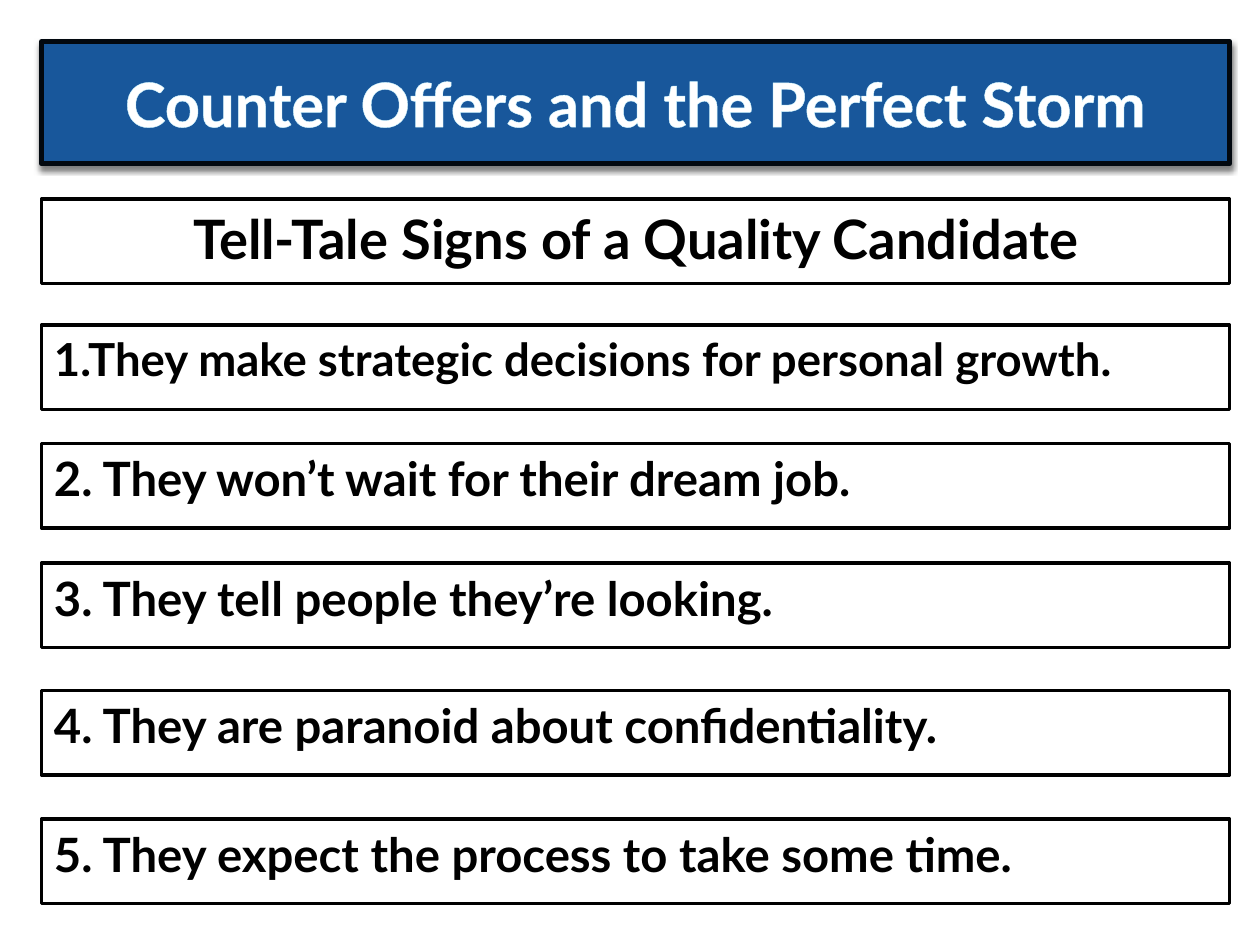
"""Build the slide on counter offers and the signs of a quality candidate."""
from dataclasses import dataclass

from lxml import etree
from pptx import Presentation
from pptx.dml.color import RGBColor
from pptx.enum.shapes import MSO_SHAPE
from pptx.enum.text import MSO_ANCHOR, MSO_AUTO_SIZE, PP_ALIGN
from pptx.oxml import parse_xml
from pptx.shapes.autoshape import Shape
from pptx.slide import Slide
from pptx.util import Inches, Pt

RECTANGLE = MSO_SHAPE.RECTANGLE
TOP, MIDDLE = MSO_ANCHOR.TOP, MSO_ANCHOR.MIDDLE
LEFT, CENTER = PP_ALIGN.LEFT, PP_ALIGN.CENTER
NO_AUTOFIT = MSO_AUTO_SIZE.NONE

FONT = "Lato"
COLORS = {
    "banner": "18579B",
    "banner_line": "02080F",
    "title_outline": "CCF2FD",
    "white": "FFFFFF",
    "black": "000000",
}
NAMESPACE = "http://schemas.openxmlformats.org/drawingml/2006/main"
BOX_LEFT, BOX_WIDTH = 0.33, 9.43
TITLE_HEIGHT, BOX_HEIGHT = 0.97, 0.67


@dataclass(frozen=True)
class Box:
    """A full-width box with one line of text."""

    text: str
    top: float
    size: int = 27
    alignment: PP_ALIGN = LEFT
    height: float = BOX_HEIGHT
    anchor: MSO_ANCHOR = TOP
    fill: str = "white"
    line: str = "black"
    line_width: int = 2
    font_color: str = "black"


TITLE = Box("Counter Offers and the Perfect Storm", 0.33, 35, CENTER, TITLE_HEIGHT,
            MIDDLE, "banner", "banner_line", 3, "white")
BOXES = [
    Box("Tell-Tale Signs of a Quality Candidate", 1.58, 31, CENTER),
    Box("1.They make strategic decisions for personal growth.", 2.58, 26),
    Box("2. They won’t wait for their dream job.", 3.52),
    Box("3. They tell people they’re looking.", 4.47),
    Box("4. They are paranoid about confidentiality.", 5.48),
    Box("5. They expect the process to take some time.", 6.5),
]


def color(name: str) -> RGBColor:
    """Return a named colour."""
    return RGBColor.from_string(COLORS[name])


def format_box(shape: Shape, box: Box) -> None:
    """Apply the place, look and text of a box to a shape."""
    shape.left, shape.top = Inches(BOX_LEFT), Inches(box.top)
    shape.width, shape.height = Inches(BOX_WIDTH), Inches(box.height)
    shape.fill.solid()
    shape.fill.fore_color.rgb = color(box.fill)
    shape.line.color.rgb = color(box.line)
    shape.line.width = Pt(box.line_width)
    shape.shadow.inherit = False

    text_frame = shape.text_frame
    text_frame.text = box.text
    text_frame.word_wrap = True
    text_frame.auto_size = NO_AUTOFIT
    text_frame.vertical_anchor = box.anchor
    paragraph = text_frame.paragraphs[0]
    paragraph.alignment = box.alignment
    font = paragraph.runs[0].font
    font.name, font.size, font.bold = FONT, Pt(box.size), True
    font.color.rgb = color(box.font_color)


def add_title_effects(title: Shape) -> None:
    """Give the title box a shadow and its letters a thin outline."""
    effects = title.element.spPr.find(f"{{{NAMESPACE}}}effectLst")
    shadow = etree.SubElement(effects, f"{{{NAMESPACE}}}outerShdw", blurRad=str(Pt(3)),
                              dist=str(Pt(2)), dir="5400000", rotWithShape="0")
    shadow_color = etree.SubElement(shadow, f"{{{NAMESPACE}}}srgbClr", val=COLORS["black"])
    etree.SubElement(shadow_color, f"{{{NAMESPACE}}}alpha", val="50000")
    outline = parse_xml(
        f'<a:ln xmlns:a="{NAMESPACE}" w="{Pt(1)}"><a:solidFill>'
        f'<a:srgbClr val="{COLORS["title_outline"]}"/></a:solidFill></a:ln>'
    )
    run = title.text_frame.paragraphs[0].runs[0]
    run.font._element.insert(0, outline)


def add_box(slide: Slide, box: Box) -> None:
    """Draw one box on the slide."""
    shape = slide.shapes.add_shape(RECTANGLE, Inches(BOX_LEFT), Inches(box.top),
                                   Inches(BOX_WIDTH), Inches(box.height))
    format_box(shape, box)


def main() -> None:
    """Build and save the presentation."""
    presentation = Presentation()
    presentation.slide_width, presentation.slide_height = Inches(10), Inches(7.5)
    slide = presentation.slides.add_slide(presentation.slide_layouts.get_by_name("Title Only"))
    title = slide.shapes.title
    format_box(title, TITLE)
    add_title_effects(title)
    for box in BOXES:
        add_box(slide, box)
    presentation.save("out.pptx")


if __name__ == "__main__":
    main()
